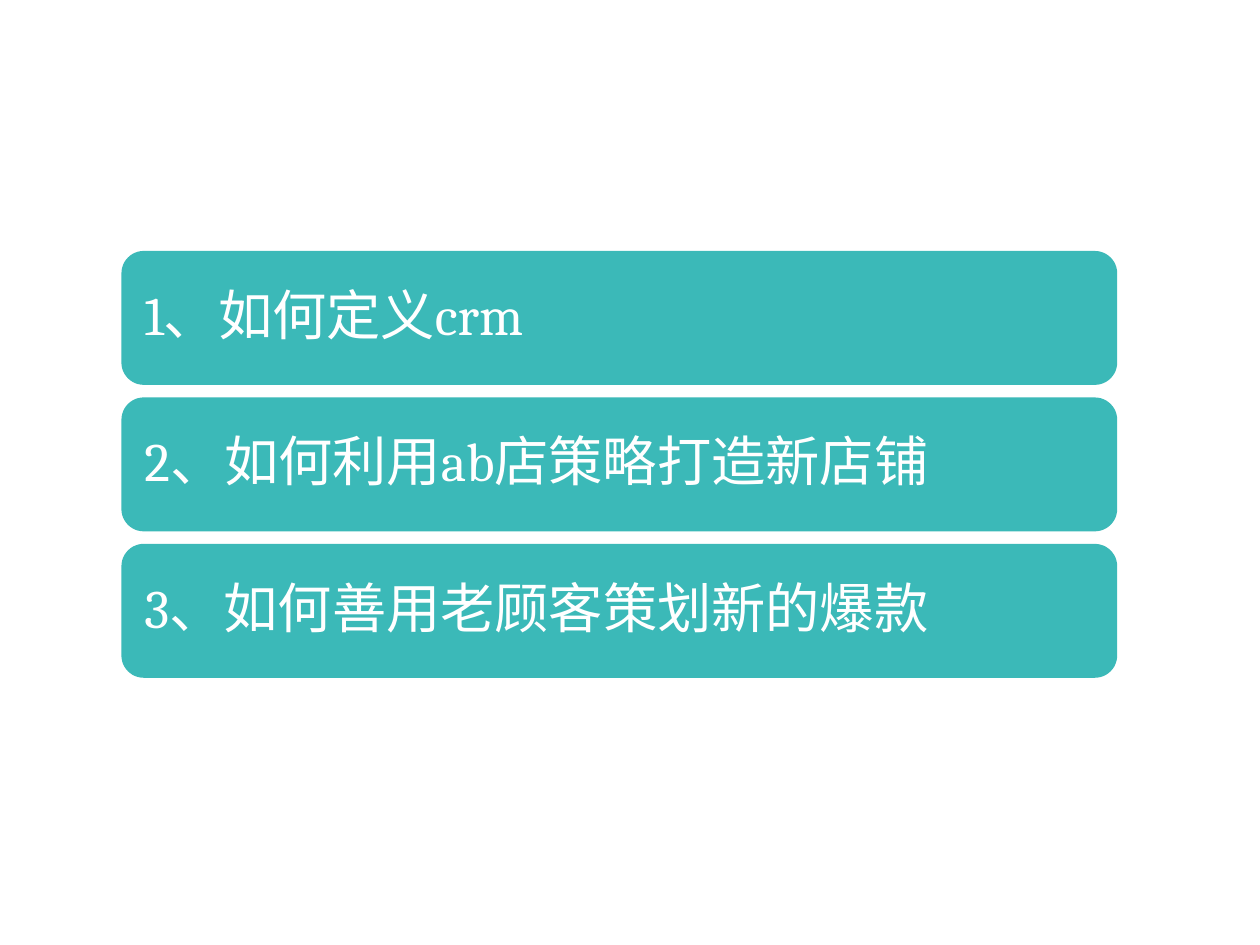
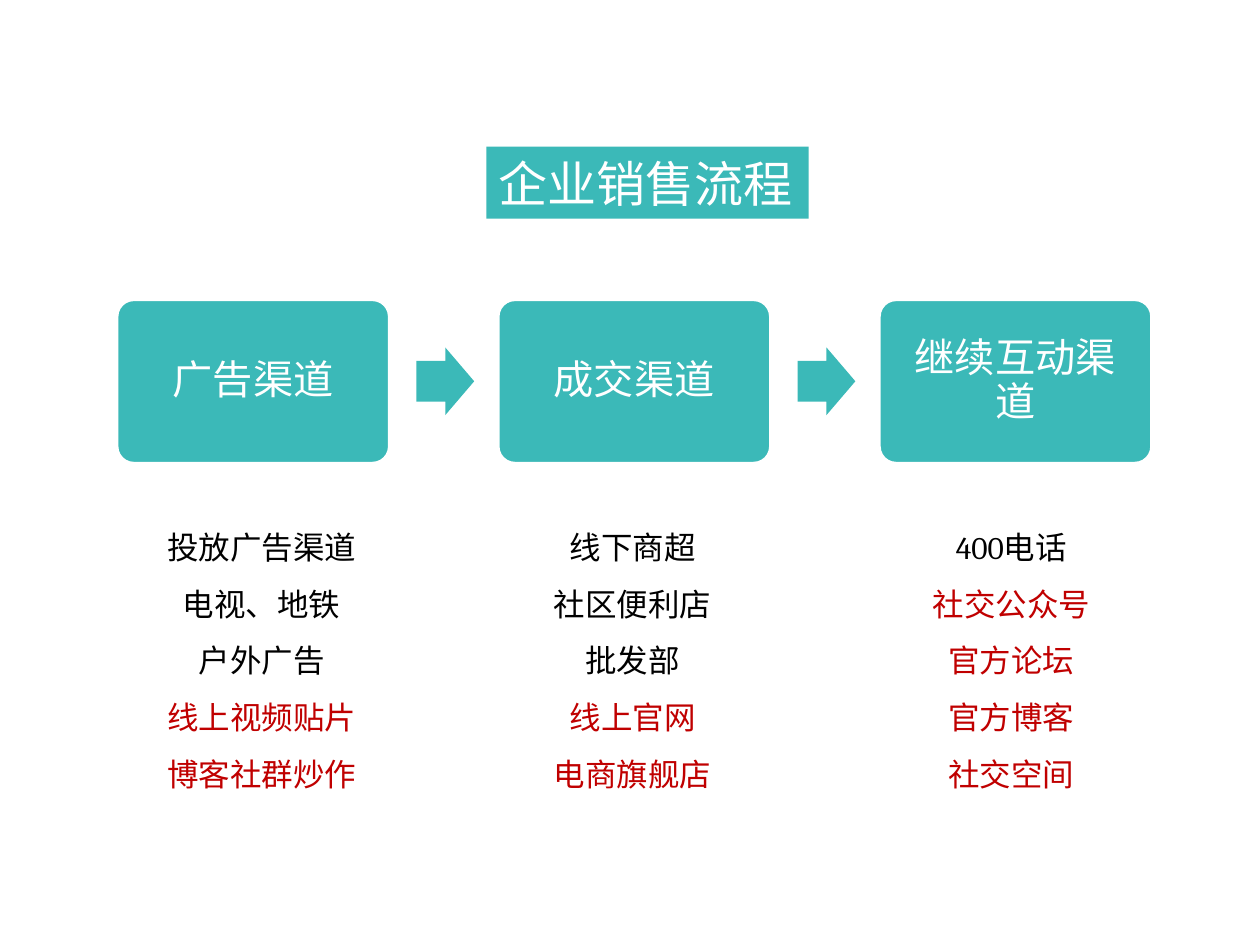
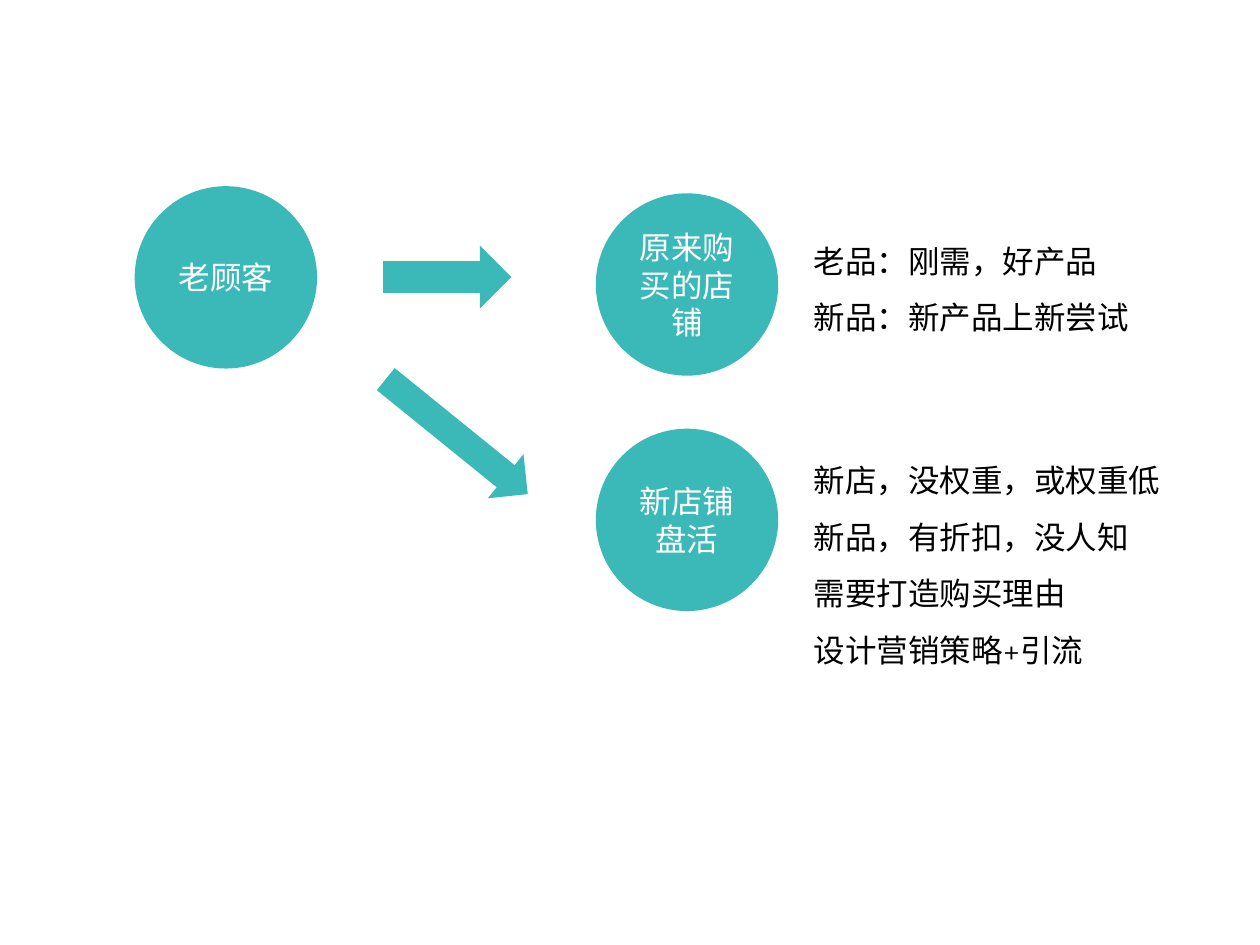
from pptx import Presentation
from pptx.dml.color import RGBColor
from pptx.enum import shapes, text
from pptx.util import Pt

TEAL = RGBColor(0x3B, 0xB9, 0xB8)
WHITE = RGBColor(0xFF, 0xFF, 0xFF)
BLACK = RGBColor(0, 0, 0)
RED = RGBColor(0xC0, 0, 0)
FONT = "Cambria"
KIND = shapes.MSO_SHAPE
LEFT = text.PP_ALIGN.LEFT
MID = text.PP_ALIGN.CENTER


def draw(slide, kind, x, y, w, h):
    shape = slide.shapes.add_shape(kind, Pt(x), Pt(y), Pt(w), Pt(h))
    shape.shadow.inherit = False
    shape.fill.solid()
    shape.fill.fore_color.rgb = TEAL
    shape.line.fill.background()
    return shape


def write(shape, lines, size, align, space=1.0, wrap=True, inset=None, color=WHITE, reds=0):
    frame = shape.text_frame
    frame.word_wrap = wrap
    if inset:
        frame.margin_left = frame.margin_right = Pt(inset)
        frame.margin_top = frame.margin_bottom = Pt(inset)
    frame.text = "\n".join(lines)
    for i, para in enumerate(frame.paragraphs):
        para.alignment = align
        para.line_spacing = space
        para.font.name = FONT
        para.font.size = Pt(size)
        para.font.color.rgb = RED if i >= len(lines) - reds else color


deck = Presentation()
deck.slide_width, deck.slide_height = Pt(720), Pt(540)
blank = deck.slide_layouts[6]

slide = deck.slides.add_slide(blank)
topics = ["1、如何定义crm", "2、如何利用ab店策略打造新店铺", "3、如何善用老顾客策划新的爆款"]
for i, topic in enumerate(topics):
    bar = draw(slide, KIND.ROUNDED_RECTANGLE, 69.4, 143.4 + i * 83.7, 569, 76.5)
    write(bar, [topic], 31, LEFT, 0.9, inset=9.4)

slide = deck.slides.add_slide(blank)
title = draw(slide, KIND.RECTANGLE, 278, 83.8, 184.2, 41.2)
write(title, ["企业销售流程"], 28, LEFT, wrap=False)

steps = [
    ("广告渠道", 149.6, 2, ["投放广告渠道", "电视、地铁", "户外广告", "线上视频贴片", "博客社群炒作"]),
    ("成交渠道", 361.5, 2, ["线下商超", "社区便利店", "批发部", "线上官网", "电商旗舰店"]),
    ("继续互动渠道", 578, 4, ["400电话", "社交公众号", "官方论坛", "官方博客", "社交空间"]),
]
for i, (name, center, reds, items) in enumerate(steps):
    x = 67.2 + i * 217.8
    card = draw(slide, KIND.ROUNDED_RECTANGLE, x, 171.6, 155, 92.8)
    card.adjustments[0] = 0.1
    card.line.color.rgb = WHITE
    card.line.width = Pt(1)
    write(card, [name], 23, MID, 0.9, inset=7)
    if i < len(steps) - 1:
        arrow = draw(slide, KIND.RIGHT_ARROW, x + 170.8, 198.6, 33, 38.6)
        arrow.adjustments[0] = 0.6
    box = slide.shapes.add_textbox(Pt(center - 62), Pt(287.3), Pt(124), Pt(170.6))
    write(box, items, 18, MID, 1.5, wrap=False, color=BLACK, reds=reds)

slide = deck.slides.add_slide(blank)
nodes = [
    (77, 106.4, ["老顾客"]),
    (340.5, 110.5, ["原来购买的店铺"]),
    (340.5, 245, ["新店铺", "盘活"]),
]
for x, y, lines in nodes:
    node = draw(slide, KIND.OVAL, x, y, 104.2, 104.2)
    write(node, lines, 18, MID)

for x, y, w, h, turn in [(218.9, 140.2, 73.4, 36.2, 0), (208.8, 233.3, 104.4, 32.4, 39)]:
    arrow = draw(slide, KIND.RIGHT_ARROW, x, y, w, h)
    arrow.rotation = turn

notes = [
    (123.8, 196.6, 72.7, ["老品：刚需，好产品", "新品：新产品上新尝试"]),
    (249.1, 214.6, 138.2, ["新店，没权重，或权重低", "新品，有折扣，没人知", "需要打造购买理由", "设计营销策略+引流"]),
]
for y, w, h, lines in notes:
    box = slide.shapes.add_textbox(Pt(458), Pt(y), Pt(w), Pt(h))
    write(box, lines, 18, LEFT, 1.5, wrap=False, color=BLACK)

deck.save("out.pptx")
